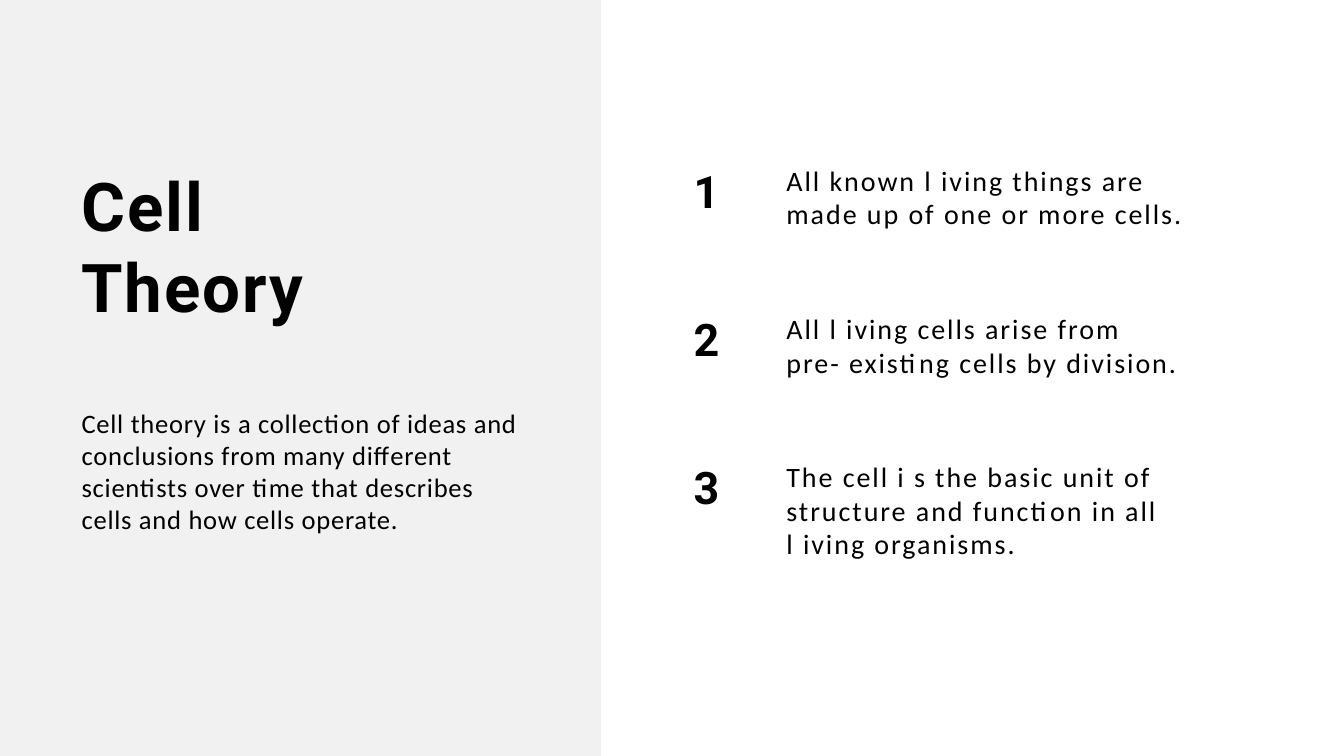
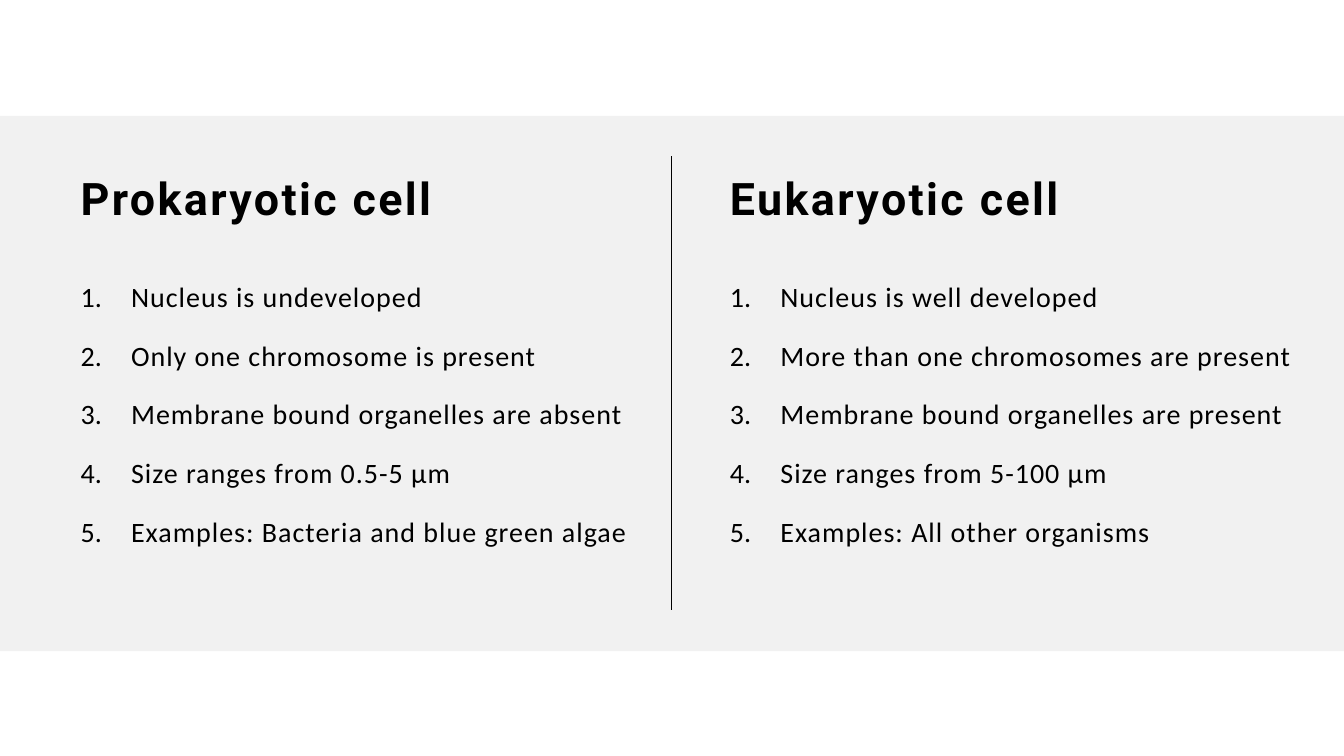
from lxml import etree
from pptx import Presentation
from pptx import util as u
from pptx.dml import color
from pptx.enum import shapes, text
from pptx.oxml import ns

BLACK, GREY = "000000", "F1F1F1"
WIDE, HIGH = 13.33, 7.5
TITLE = {"name": "Roboto", "size": u.Pt(48), "bold": True, "track": 1.3}
HEAD = {**TITLE, "size": u.Pt(32), "track": 1.7}
DIGIT = {**HEAD, "track": 0}
INTRO = {"name": "Calibri", "size": u.Pt(19), "bold": False, "track": 0.55}
POINT = {**INTRO, "size": u.Pt(20), "track": 1.4}
LIST = {**POINT, "track": 0.7}

TENETS = [
    "All known l iving things are\vmade up of one or more cells.",
    "All l iving cells arise from\vpre- existing cells by division.",
    "The cell i s the basic unit of\vstructure and function in all\vl iving organisms.",
]
KINDS = [
    ("Prokaryotic cell", [
        "Nucleus is undeveloped",
        "Only one chromosome is present",
        "Membrane bound organelles are absent",
        "Size ranges from 0.5-5 µm",
        "Examples: Bacteria and blue green algae",
    ]),
    ("Eukaryotic cell", [
        "Nucleus is well developed",
        "More than one chromosomes are present",
        "Membrane bound organelles are present",
        "Size ranges from 5-100 µm",
        "Examples: All other organisms",
    ]),
]


def paint(target, tone):
    """Set a font, fill or line colour from a hex string."""
    if hasattr(target, "solid"):
        target.solid()
        target = target.fore_color
    else:
        target = target.color
    target.rgb = color.RGBColor.from_string(tone)


def band(slide, left, top, width, height):
    """Add a grey band behind everything else on the slide."""
    shape = slide.shapes.add_shape(
        shapes.MSO_SHAPE.RECTANGLE, *map(u.Inches, (left, top, width, height)))
    shape.shadow.inherit = False
    paint(shape.fill, GREY)
    shape.line.fill.background()
    slide.shapes.element.insert(2, shape.element)


def rule(slide, left, top, height):
    """Add a thin vertical dividing line."""
    line = slide.shapes.add_connector(
        shapes.MSO_CONNECTOR.STRAIGHT,
        *map(u.Inches, (left, top, left, top + height)))
    paint(line.line, BLACK)
    line.line.width = u.Pt(0.48)
    etree.SubElement(line.element.spPr, ns.qn("a:effectLst"))


def mark(para, count):
    """Number a paragraph with a hanging indent, or clear its bullet."""
    props = para._p.get_or_add_pPr()
    indent = u.Inches(0.5) if count else 0
    props.set("marL", str(indent))
    props.set("indent", str(-indent))
    if count:
        etree.SubElement(props, ns.qn("a:buFont"), typeface="+mj-lt")
        etree.SubElement(props, ns.qn("a:buAutoNum"), type="arabicPeriod")
    else:
        etree.SubElement(props, ns.qn("a:buNone"))


def write(shape, place, lines, style, count=False):
    """Place a text shape and fill it with styled paragraphs."""
    spots = zip(("left", "top", "width", "height"), place)
    for key, value in spots:
        setattr(shape, key, u.Inches(value))
    frame = shape.text_frame
    setup = {
        "word_wrap": True, "auto_size": text.MSO_AUTO_SIZE.NONE,
        "vertical_anchor": text.MSO_ANCHOR.TOP, "margin_left": 0,
        "margin_right": 0, "margin_top": u.Inches(0.02), "margin_bottom": 0,
    }
    for key, value in setup.items():
        setattr(frame, key, value)
    for index, line in enumerate(lines):
        para = frame.add_paragraph() if index else frame.paragraphs[0]
        para.text = line
        para.alignment = text.PP_ALIGN.LEFT
        para.space_before = u.Pt(18 if index else 0)
        mark(para, count)
        for run in para.runs:
            dress(run, style)


def dress(run, style):
    """Apply a text style, with its letter spacing in points."""
    for key, value in style.items():
        if key == "track":
            run._r.get_or_add_rPr().set("spc", str(round(value * 100)))
        else:
            setattr(run.font, key, value)
    paint(run.font, BLACK)


def label(slide, place, line, style):
    """Add a text box with one styled paragraph."""
    box = slide.shapes.add_textbox(*map(u.Inches, place))
    write(box, place, [line], style)


def theory(deck):
    """Build the slide on cell theory."""
    slide = deck.slides.add_slide(deck.slide_layouts[1])
    band(slide, 0, 0, 5.96, HIGH)
    title, body = slide.placeholders
    write(title, (0.81, 1.61, 2.48, 1.6), ["Cell\vTheory"], TITLE)
    intro = ("Cell theory is a collection of ideas and conclusions from many "
             "different scientists over time that describes cells and how "
             "cells operate.")
    write(body, (0.81, 4.02, 4.4, 1.58), [intro], INTRO)
    for index, tenet in enumerate(TENETS):
        top = 1.6 + index * 1.47
        label(slide, (6.88, top, 0.31, 0.55), str(index + 1), DIGIT)
        label(slide, (7.8, top, 4.4, 0.98), tenet, POINT)


def compare(deck):
    """Build the slide that compares the two kinds of cell."""
    slide = deck.slides.add_slide(deck.slide_layouts[3])
    band(slide, 0, 1.15, WIDE, 5.31)
    title, *bodies = slide.placeholders
    rule(slide, 6.66, 1.55, 4.5)
    for index, (body, (name, facts)) in enumerate(zip(bodies, KINDS)):
        left = 0.8 + index * 6.44
        spot = (left, 1.67, 3.91, 0.56)
        if index:
            label(slide, spot, name, HEAD)
        else:
            write(title, spot, [name], HEAD)
        write(body, (left, 2.75, 5.75, 2.7), facts, LIST, count=True)


def main():
    """Build and save the deck."""
    deck = Presentation()
    deck.slide_width, deck.slide_height = u.Inches(WIDE), u.Inches(HIGH)
    theory(deck)
    compare(deck)
    deck.save("out.pptx")


if __name__ == "__main__":
    main()
